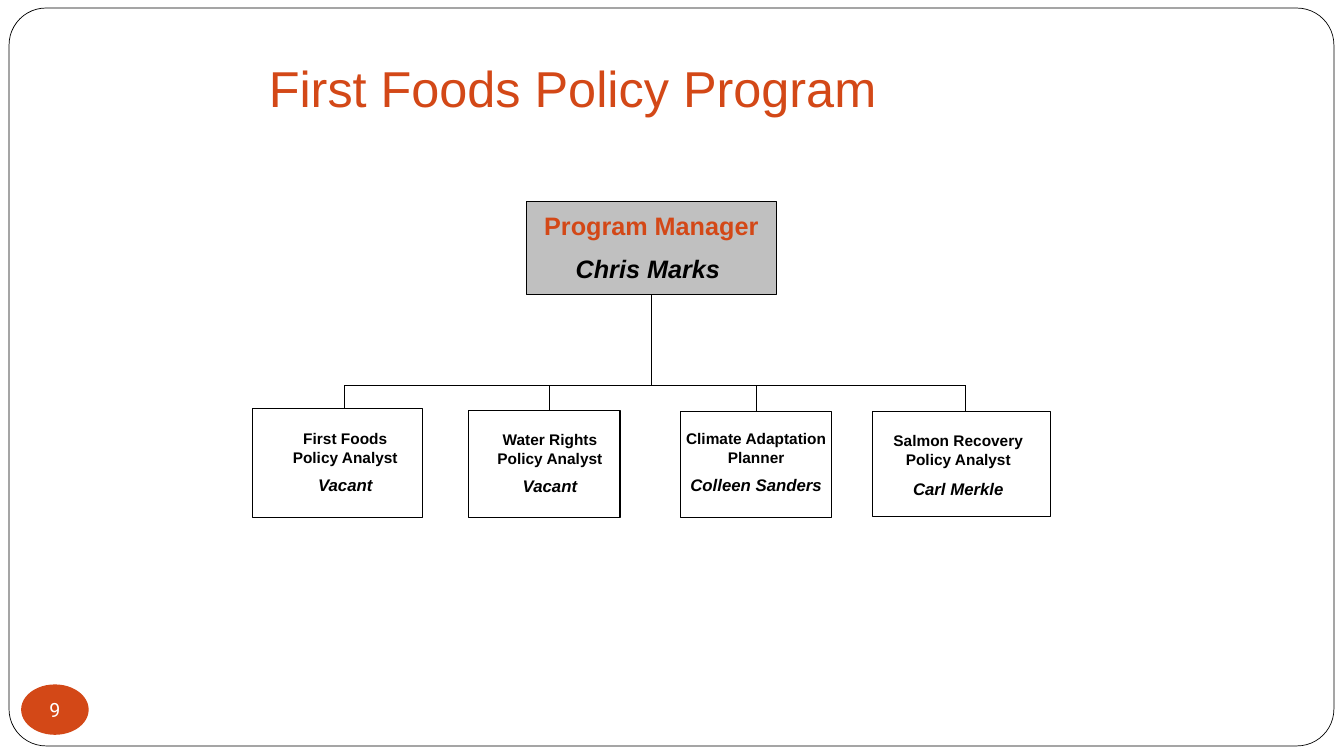
from lxml import etree
from pptx import Presentation
from pptx.dml.color import RGBColor
from pptx.enum.shapes import MSO_CONNECTOR, MSO_SHAPE
from pptx.enum.text import MSO_ANCHOR, PP_ALIGN
from pptx.oxml.ns import qn
from pptx.util import Inches, Pt

BLACK, WHITE, ORANGE, SILVER = "000000", "FFFFFF", "D34817", "C0C0C0"
TITLE = "First Foods Policy Program"
PAGE_NUMBER = "9"
MANAGER = ("Program Manager", "Chris Marks ")
MANAGER_BOX = (5.22, 2, 2.48, 0.92)
MANAGER_LABEL = (5.25, 2.04, 2.42, 0.86)
RAIL_Y = 3.82
STAFF = [
    {"role": ["First Foods Policy Analyst"], "person": "Vacant", "drop": 3.42,
     "box": (2.5, 4.05, 1.69, 1.08), "label": (2.79, 4.21, 1.27, 0.77)},
    {"role": ["Water Rights Policy Analyst"], "person": "Vacant", "drop": 5.45,
     "box": (4.65, 4.07, 1.5, 1.06), "label": (4.82, 4.22, 1.27, 0.77)},
    {"role": ["Climate Adaptation Planner"], "person": "Colleen Sanders", "drop": 7.5,
     "box": (6.75, 4.08, 1.5, 1.05), "label": (6.69, 4.21, 1.62, 0.77)},
    {"role": ["Salmon Recovery", "Policy Analyst"], "person": "Carl Merkle", "drop": 9.58,
     "box": (8.65, 4.08, 1.77, 1.04), "label": (8.71, 4.23, 1.59, 0.77)},
]

prs = Presentation()
prs.slide_width, prs.slide_height = Inches(13.33), Inches(7.5)
slide = prs.slides.add_slide(prs.slide_layouts[6])


def color(hex_value):
    return RGBColor.from_string(hex_value)


def add_box(preset, place, fill=None, line=None, weight=0.75):
    box = slide.shapes.add_shape(preset, *map(Inches, place))
    box.shadow.inherit = False
    if fill:
        box.fill.solid()
        box.fill.fore_color.rgb = color(fill)
    else:
        box.fill.background()
    if line:
        box.line.color.rgb = color(line)
        box.line.width = Pt(weight)
    else:
        box.line.fill.background()
    return box


def add_line(x1, y1, x2, y2):
    line = slide.shapes.add_connector(
        MSO_CONNECTOR.STRAIGHT, *map(Inches, (x1, y1, x2, y2)))
    line.line.color.rgb = color(BLACK)
    line.line.width = Pt(0.75)
    etree.SubElement(line._element.spPr, qn("a:effectLst"))
    return line


def style(paragraph, size, hex_value, bold=False, italic=False, face="Arial"):
    paragraph.alignment = PP_ALIGN.CENTER
    for run in paragraph.runs:
        run.font.name = face
        run.font.size = Pt(size)
        run.font.color.rgb = color(hex_value)
        run.font.bold = bold
        run.font.italic = italic


def add_label(place, lines):
    frame = slide.shapes.add_textbox(*map(Inches, place)).text_frame
    frame.word_wrap = True
    frame.text = "\n".join(lines)
    return frame


def add_position(place, role, person, role_size, person_size, role_color):
    frame = add_label(place, [*role, person])
    *role_lines, person_line = frame.paragraphs
    for role_line in role_lines:
        style(role_line, role_size, role_color, bold=True)
    style(person_line, person_size, BLACK, bold=True, italic=True)
    if len(role) > 1:
        person_line.line_spacing = 1.5
    else:
        person_line.space_before = Pt(person_size / 2)


page_frame = add_box(MSO_SHAPE.ROUNDED_RECTANGLE, (0.09, 0.08, 13.14, 7.32), WHITE, BLACK, 0.5)
page_frame.adjustments[0] = 0.05

title = add_label((0.74, 0.44, 9.88, 0.83), [TITLE])
title.vertical_anchor = MSO_ANCHOR.BOTTOM
title.margin_bottom = Inches(0.1)
style(title.paragraphs[0], 36, ORANGE)

manager_box = add_box(MSO_SHAPE.RECTANGLE, MANAGER_BOX, SILVER, BLACK)
add_position(MANAGER_LABEL, MANAGER[:1], MANAGER[1], 18, 18, ORANGE)

left, top, width, height = MANAGER_BOX
trunk_x = left + width / 2
trunk = add_line(trunk_x, top + height, trunk_x, RAIL_Y)
trunk.begin_connect(manager_box, 2)
add_line(STAFF[0]["drop"], RAIL_Y, STAFF[-1]["drop"], RAIL_Y)

for member in STAFF:
    left, top, width, height = member["box"]
    staff_box = add_box(MSO_SHAPE.RECTANGLE, member["box"], line=BLACK)
    drop = add_line(member["drop"], RAIL_Y, member["drop"], top)
    if abs(member["drop"] - left - width / 2) < 0.01:
        drop.end_connect(staff_box, 0)
    add_position(member["label"], member["role"], member["person"], 11, 12, BLACK)

badge = add_box(MSO_SHAPE.OVAL, (0.21, 6.79, 0.67, 0.5), ORANGE).text_frame
badge.margin_left = badge.margin_right = badge.margin_top = badge.margin_bottom = 0
badge.word_wrap = False
badge.vertical_anchor = MSO_ANCHOR.MIDDLE
badge.text = PAGE_NUMBER
style(badge.paragraphs[0], 14, WHITE, face="Roboto")

prs.save("out.pptx")
